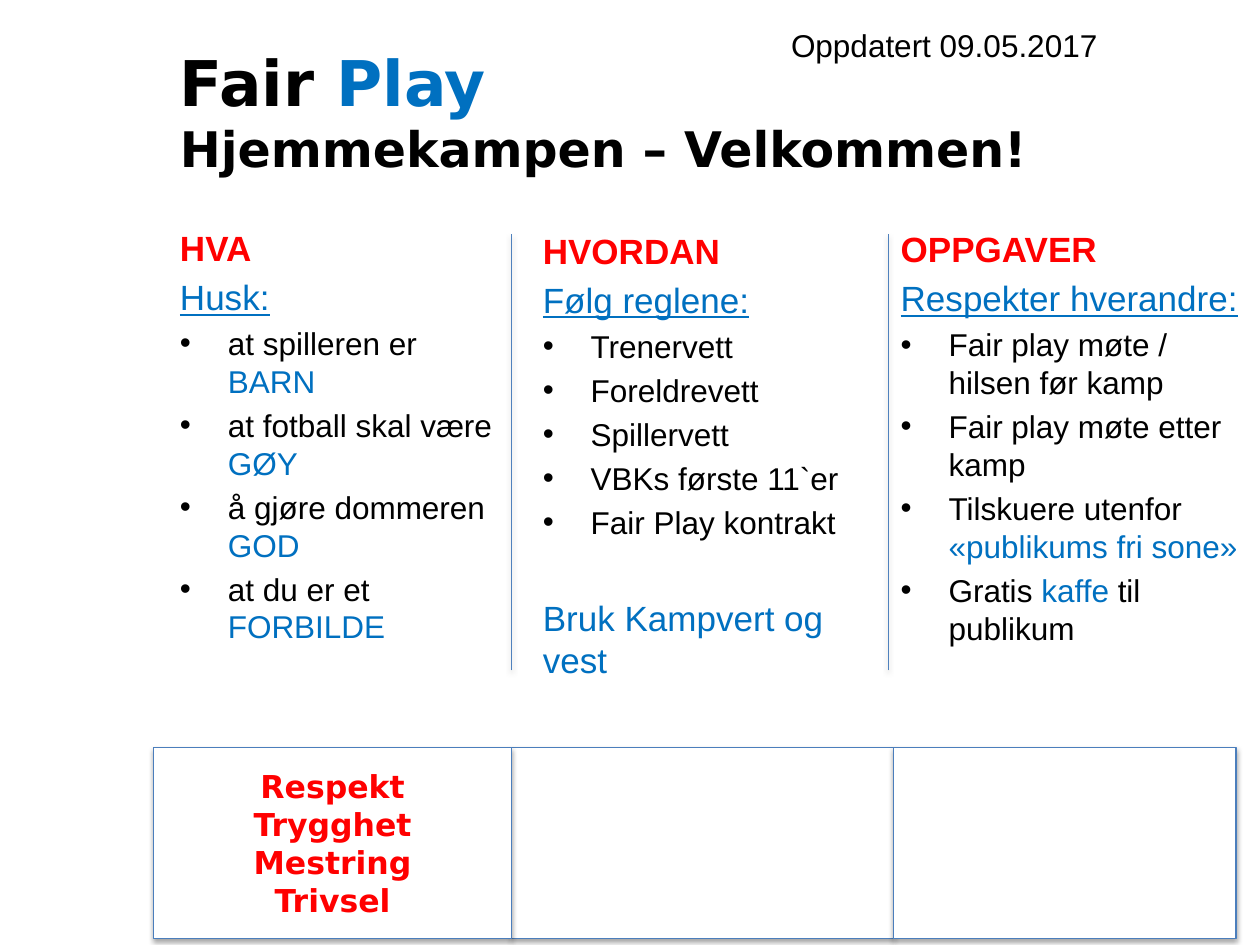
from lxml import etree
from pptx import Presentation
from pptx.dml.color import RGBColor
from pptx.enum.shapes import MSO_CONNECTOR, MSO_SHAPE
from pptx.enum.text import MSO_ANCHOR, MSO_AUTO_SIZE, PP_ALIGN
from pptx.oxml.ns import qn
from pptx.util import Inches, Pt

STRAIGHT, RECTANGLE = MSO_CONNECTOR.STRAIGHT, MSO_SHAPE.RECTANGLE
MIDDLE, TOP = MSO_ANCHOR.MIDDLE, MSO_ANCHOR.TOP
LEFT, CENTER = PP_ALIGN.LEFT, PP_ALIGN.CENTER

THEME = {
    "black": "000000", "blue": "0070C0", "red": "FF0000", "white": "FFFFFF",
    "divider": "4F81BD", "border": "4B7EBC",
    "body_font": "Arial", "display_font": "DejaVu Sans",
    "title": 36, "subtitle": 28, "heading": 20, "text": 18,
}

# Font and paragraph values by role; space before is in points.
STYLES = {
    "title": {"font": "display_font", "size": "title", "bold": True},
    "subtitle": {"font": "display_font", "size": "subtitle", "bold": True},
    "heading": {"size": "heading", "color": "red", "bold": True},
    "lead": {"size": "heading", "color": "blue", "underline": True, "before": 4},
    "bullet": {"before": 3.6, "bullet": True},
    "closing": {"size": "heading", "color": "blue", "before": 32},
    "value": {"font": "display_font", "color": "red", "bold": True, "align": CENTER},
    "date": {},
}

# A paragraph is (style, run, run, ...); a run is text or (text, colour).
COLUMNS = [
    ((1.33, 1.75, 2.72, 3.57), [
        ("heading", "HVA"),
        ("lead", "Husk:"),
        ("bullet", "at spilleren er ", ("BARN", "blue")),
        ("bullet", "at fotball skal være ", ("GØY", "blue")),
        ("bullet", "å gjøre dommeren ", ("GOD", "blue")),
        ("bullet", "at du er et ", ("FORBILDE", "blue")),
    ]),
    ((7.05, 1.76, 2.95, 4.12), [
        ("heading", "OPPGAVER"),
        ("lead", "Respekter hverandre:"),
        ("bullet", "Fair play møte / hilsen før kamp"),
        ("bullet", "Fair play møte etter kamp"),
        ("bullet", "Tilskuere utenfor ", ("«publikums fri sone»", "blue")),
        ("bullet", "Gratis ", ("kaffe", "blue"), " til publikum"),
    ]),
    ((4.21, 1.77, 2.84, 3.63), [
        ("heading", "HVORDAN"),
        ("lead", "Følg reglene:"),
        ("bullet", "Trenervett"),
        ("bullet", "Foreldrevett"),
        ("bullet", "Spillervett"),
        ("bullet", "VBKs første 11`er"),
        ("bullet", "Fair Play kontrakt"),
        ("closing", "Bruk Kampvert og vest"),
    ]),
]
TITLE = [
    ("title", "Fair ", ("Play", "blue")),
    ("subtitle", "Hjemmekampen – Velkommen!"),
]
VALUES = [("value", word) for word in ("Respekt", "Trygghet", "Mestring", "Trivsel")]

DIVIDERS = (4.06, 7.05)
DIVIDER_TOP, DIVIDER_BOTTOM = 1.86, 5.32
PANEL_EDGES = (1.22, 4.06, 7.09, 9.81)
PANEL_TOP, PANEL_HEIGHT = 5.93, 1.52
PANEL_TEXTS = (VALUES, [], [])
INDENT = Inches(0.38)


def color(name):
    return RGBColor.from_string(THEME[name])


def add_bullet(paragraph):
    properties = paragraph._p.get_or_add_pPr()
    properties.set("marL", str(INDENT))
    properties.set("indent", str(-INDENT))
    etree.SubElement(properties, qn("a:buFont"), typeface="Arial")
    etree.SubElement(properties, qn("a:buChar"), char="•")


def add_shadow(shape, opacity, distance):
    """Give the shape a soft black shadow straight below it."""
    effects = etree.SubElement(shape._element.spPr, qn("a:effectLst"))
    shadow = etree.SubElement(effects, qn("a:outerShdw"), blurRad=str(Pt(3.1)),
                              dist=str(Pt(distance)), dir="5400000", rotWithShape="0")
    tint = etree.SubElement(shadow, qn("a:srgbClr"), val=THEME["black"])
    etree.SubElement(tint, qn("a:alpha"), val=str(opacity * 1000))


def write(frame, paragraphs, anchor=TOP, wrap=True):
    frame.word_wrap = wrap
    frame.vertical_anchor = anchor
    for index, (style_name, *runs) in enumerate(paragraphs):
        style = STYLES[style_name]
        paragraph = frame.add_paragraph() if index else frame.paragraphs[0]
        paragraph.alignment = style.get("align", LEFT)
        paragraph.space_before = Pt(style.get("before", 0))
        if style.get("bullet"):
            add_bullet(paragraph)
        font_values = {
            "name": THEME[style.get("font", "body_font")],
            "size": Pt(THEME[style.get("size", "text")]),
            "bold": style.get("bold", False),
            "underline": style.get("underline", False),
        }
        for item in runs:
            default = style.get("color", "black")
            text, run_color = (item, default) if isinstance(item, str) else item
            run = paragraph.add_run()
            run.text = text
            for attribute, value in font_values.items():
                setattr(run.font, attribute, value)
            run.font.color.rgb = color(run_color)


def add_text(slide, box, paragraphs, **options):
    shape = slide.shapes.add_textbox(*map(Inches, box))
    write(shape.text_frame, paragraphs, **options)
    return shape


def add_divider(slide, x):
    divider = slide.shapes.add_connector(
        STRAIGHT, Inches(x), Inches(DIVIDER_BOTTOM), Inches(x), Inches(DIVIDER_TOP))
    divider.line.color.rgb = color("divider")
    divider.line.width = Pt(0.25)
    add_shadow(divider, 38, 1.6)


def add_panel(slide, left, right, paragraphs):
    box = (left, PANEL_TOP, right - left, PANEL_HEIGHT)
    panel = slide.shapes.add_shape(RECTANGLE, *map(Inches, box))
    panel.fill.solid()
    panel.fill.fore_color.rgb = color("white")
    panel.line.color.rgb = color("border")
    panel.line.width = Pt(0.75)
    add_shadow(panel, 35, 1.8)
    write(panel.text_frame, paragraphs, anchor=MIDDLE)


def main():
    presentation = Presentation()
    presentation.slide_width, presentation.slide_height = Inches(10), Inches(7.5)
    slide = presentation.slides.add_slide(presentation.slide_layouts[6])
    add_text(slide, (1.33, 0.25, 7.13, 1.25), TITLE, anchor=MIDDLE)
    for box, paragraphs in COLUMNS:
        add_text(slide, box, paragraphs)
    for x in DIVIDERS:
        add_divider(slide, x)
    panels = list(zip(PANEL_EDGES, PANEL_EDGES[1:], PANEL_TEXTS))
    for left, right, paragraphs in panels[1:] + panels[:1]:
        add_panel(slide, left, right, paragraphs)
    date = add_text(slide, (6.18, 0.16, 2.66, 0.4),
                    [("date", "Oppdatert 09.05.2017")], wrap=False)
    date.text_frame.auto_size = MSO_AUTO_SIZE.SHAPE_TO_FIT_TEXT
    presentation.save("out.pptx")


if __name__ == "__main__":
    main()
